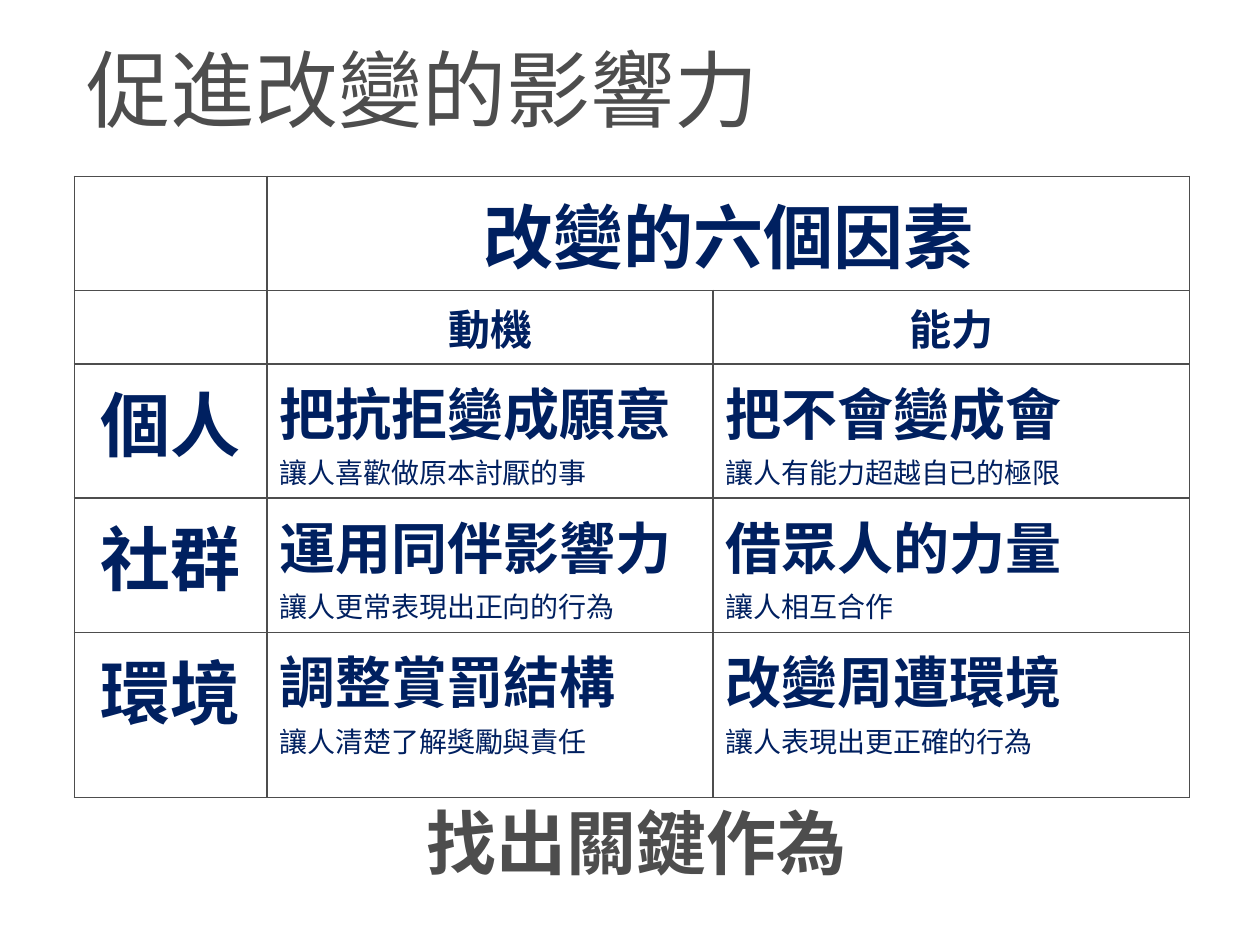
from dataclasses import dataclass
from lxml.etree import SubElement as Sub
from pptx import Presentation as Deck
from pptx.dml.color import RGBColor as Color
from pptx.enum.text import MSO_ANCHOR as Anchor
from pptx.enum.text import MSO_AUTO_SIZE as Fit
from pptx.enum.text import PP_ALIGN as Align
from pptx.oxml.ns import qn
from pptx.util import Pt


@dataclass(frozen=True)
class Theme:
    gray: str = "4D4D4D"
    navy: str = "002060"
    sans: str = "DejaVu Sans"
    han: str = "Noto Sans CJK SC"
    title: int = 48
    big: int = 40
    head: int = 32
    sub: int = 24
    note: int = 16


T = Theme()
COLS = (110.2, 254.9, 272.2)
ROWS = (36.7, 36.7, 68.4, 63.4, 94.3)
TOPICS = ("動機", "能力")
LEVELS = (
    ("個人", ("把抗拒變成願意", "讓人喜歡做原本討厭的事"),
     ("把不會變成會", "讓人有能力超越自已的極限")),
    ("社群", ("運用同伴影響力", "讓人更常表現出正向的行為"),
     ("借眾人的力量", "讓人相互合作")),
    ("環境", ("調整賞罰結構", "讓人清楚了解獎勵與責任"),
     ("改變周遭環境", "讓人表現出更正確的行為")),
)


def write(para, text, size=T.big, color=T.navy, font=T.han, bold=True, align=Align.CENTER):
    para.alignment = align
    run = para.add_run()
    run.text = text
    run.font.size = Pt(size)
    run.font.bold = bold
    run.font.name = font
    run.font.color.rgb = Color.from_string(color)
    Sub(run.font._element, qn("a:ea"), typeface=font)


def frame(cell):
    props = cell._tc.get_or_add_tcPr()
    for side in ("lnL", "lnR", "lnT", "lnB"):
        line = Sub(props, qn(f"a:{side}"), w=str(Pt(1)))
        fill = Sub(line, qn("a:solidFill"))
        Sub(fill, qn("a:srgbClr"), val=T.gray)
    cell.fill.background()


def label(cell, text, **style):
    write(cell.text_frame.paragraphs[0], text, **style)


def factor(cell, head, note):
    label(cell, head, size=T.head, align=Align.LEFT)
    write(cell.text_frame.add_paragraph(), note, size=T.note, bold=False, align=Align.LEFT)


def add_grid(slide):
    shape = slide.shapes.add_table(len(ROWS), len(COLS), Pt(42.5), Pt(100.8),
                                   Pt(sum(COLS)), Pt(sum(ROWS)))
    grid = shape.table
    grid.first_row = grid.horz_banding = False
    for col, width in zip(grid.columns, COLS):
        col.width = Pt(width)
    for row, height in zip(grid.rows, ROWS):
        row.height = Pt(height)
    for cell in grid.iter_cells():
        frame(cell)
    grid.cell(0, 1).merge(grid.cell(0, 2))
    label(grid.cell(0, 1), "改變的六個因素")
    for col, topic in enumerate(TOPICS, 1):
        label(grid.cell(1, col), topic, size=T.sub)
    for row, (level, *pairs) in enumerate(LEVELS, 2):
        label(grid.cell(row, 0), level)
        for col, pair in enumerate(pairs, 1):
            factor(grid.cell(row, col), *pair)


def add_title(slide):
    title = slide.shapes.title
    title.left, title.top, title.width, title.height = Pt(42.5), Pt(17.3), Pt(402.5), Pt(65.5)
    body = title.text_frame
    body.auto_size = Fit.NONE
    body.word_wrap = False
    body.vertical_anchor = Anchor.MIDDLE
    write(body.paragraphs[0], "促進改變的影響力", size=T.title, color=T.gray,
          font=T.sans, bold=False, align=Align.LEFT)


def add_call(slide):
    box = slide.shapes.add_textbox(Pt(236.9), Pt(453.6), Pt(257), Pt(55.4))
    body = box.text_frame
    body.word_wrap = False
    body.auto_size = Fit.SHAPE_TO_FIT_TEXT
    write(body.paragraphs[0], "找出關鍵作為", color=T.gray, align=Align.LEFT)


def main():
    deck = Deck()
    deck.slide_width, deck.slide_height = Pt(720), Pt(540)
    slide = deck.slides.add_slide(deck.slide_layouts[5])
    add_title(slide)
    add_grid(slide)
    add_call(slide)
    deck.save("out.pptx")


if __name__ == "__main__":
    main()
